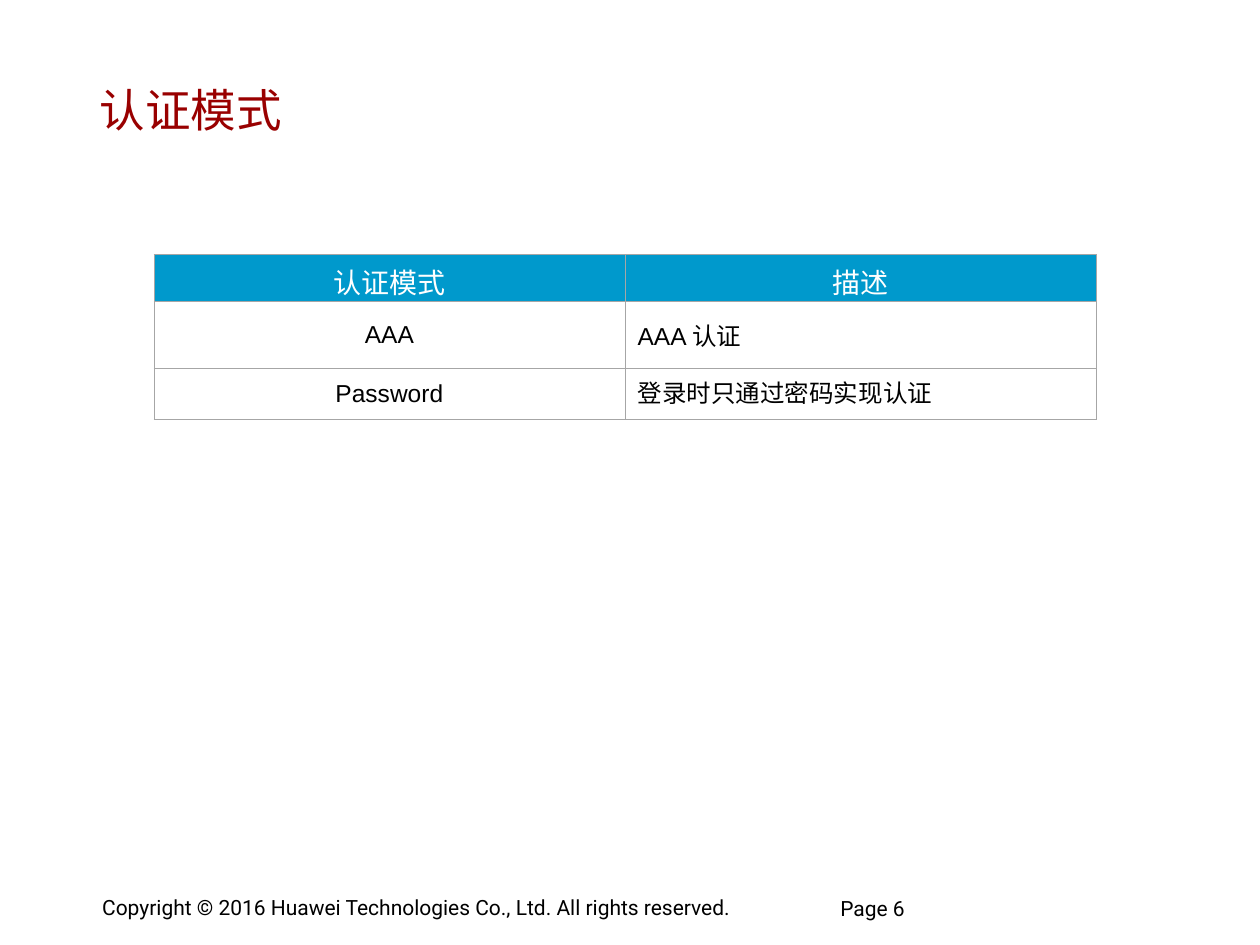
from dataclasses import dataclass

from lxml.etree import SubElement
from pptx import Presentation
from pptx.dml.color import RGBColor
from pptx.enum.text import MSO_ANCHOR as Anchor, PP_ALIGN as Align
from pptx.oxml.ns import qn
from pptx.util import Cm, Pt

BLACK, WHITE, RED, BLUE, GREY = "000000", "FFFFFF", "990000", "0099CC", "A6A6A6"


@dataclass
class Label:
    text: str
    left: float
    top: float
    width: float
    height: float
    size: float
    font: str = "Roboto"
    color: str = BLACK
    anchor: Anchor = Anchor.TOP
    inset_x: float = 0.23
    inset_y: float = 0.1
    wrap: bool = True
    spacing: float = 1.0


@dataclass
class Cell:
    text: str
    align: Align = Align.CENTER
    anchor: Anchor = Anchor.MIDDLE
    size: float = 14
    color: str = BLACK
    fill: str = WHITE


def rgb(value: str) -> RGBColor:
    return RGBColor.from_string(value)


def style_text(tf, size: float, font: str, color: str) -> None:
    for p in tf.paragraphs:
        for r in p.runs:
            r.font.size = Pt(size)
            r.font.name = font
            r.font.color.rgb = rgb(color)


def add_label(slide, label: Label) -> None:
    sp = slide.shapes.add_textbox(
        Cm(label.left), Cm(label.top), Cm(label.width), Cm(label.height)
    )
    tf = sp.text_frame
    tf.word_wrap = label.wrap
    tf.vertical_anchor = label.anchor
    tf.margin_left = tf.margin_right = Cm(label.inset_x)
    tf.margin_top = tf.margin_bottom = Cm(label.inset_y)
    tf.text = label.text
    tf.paragraphs[0].line_spacing = label.spacing
    style_text(tf, label.size, label.font, label.color)


def set_borders(cell, color: str, width: float) -> None:
    tc_pr = cell._tc.get_or_add_tcPr()
    for i, side in enumerate(("lnL", "lnR", "lnT", "lnB")):
        ln = tc_pr.makeelement(qn(f"a:{side}"), {"w": str(Pt(width))})
        fill = SubElement(ln, qn("a:solidFill"))
        SubElement(fill, qn("a:srgbClr"), val=color)
        tc_pr.insert(i, ln)


def add_table(slide, left: float, top: float, col_width: float,
              heights: list[float], rows: list[list[Cell]]) -> None:
    n_cols = len(rows[0])
    table = slide.shapes.add_table(
        len(rows), n_cols, Cm(left), Cm(top),
        Cm(col_width * n_cols), Cm(sum(heights)),
    ).table
    for col in table.columns:
        col.width = Cm(col_width)
    for i, (height, row) in enumerate(zip(heights, rows)):
        table.rows[i].height = Cm(height)
        for j, item in enumerate(row):
            cell = table.cell(i, j)
            cell.fill.solid()
            cell.fill.fore_color.rgb = rgb(item.fill)
            cell.vertical_anchor = item.anchor
            tf = cell.text_frame
            tf.text = item.text
            tf.paragraphs[0].alignment = item.align
            style_text(tf, item.size, "Arial", item.color)
            for r in tf.paragraphs[0].runs:
                r.font.bold = False
            set_borders(cell, GREY, 0.25)


def header(text: str) -> Cell:
    return Cell(text, anchor=Anchor.TOP, size=16, color=WHITE, fill=BLUE)


LABELS = [
    Label("Copyright © 2016 Huawei Technologies Co., Ltd. All rights reserved.",
          1.83, 17.93, 13.94, 0.74, 12, wrap=False),
    Label("认证模式", 1.78, 0.99, 21.46, 2.41, 26, "Arial", RED, Anchor.MIDDLE),
    Label("Page 6", 16.94, 18.14, 4.22, 0.91, 12,
          inset_x=0, inset_y=0, spacing=0.85),
]

MODES = [
    [header("认证模式"), header("描述")],
    [Cell("AAA"), Cell("AAA 认证", Align.LEFT)],
    [Cell("Password"), Cell("登录时只通过密码实现认证", Align.LEFT, Anchor.TOP)],
]


def main() -> None:
    prs = Presentation()
    prs.slide_width, prs.slide_height = Cm(25.4), Cm(19.05)
    slide = prs.slides.add_slide(prs.slide_layouts[6])
    for label in LABELS:
        add_label(slide, label)
    add_table(slide, 3.1, 5.13, 9.5, [0.94, 1.35, 1.04], MODES)
    prs.save("out.pptx")


if __name__ == "__main__":
    main()
